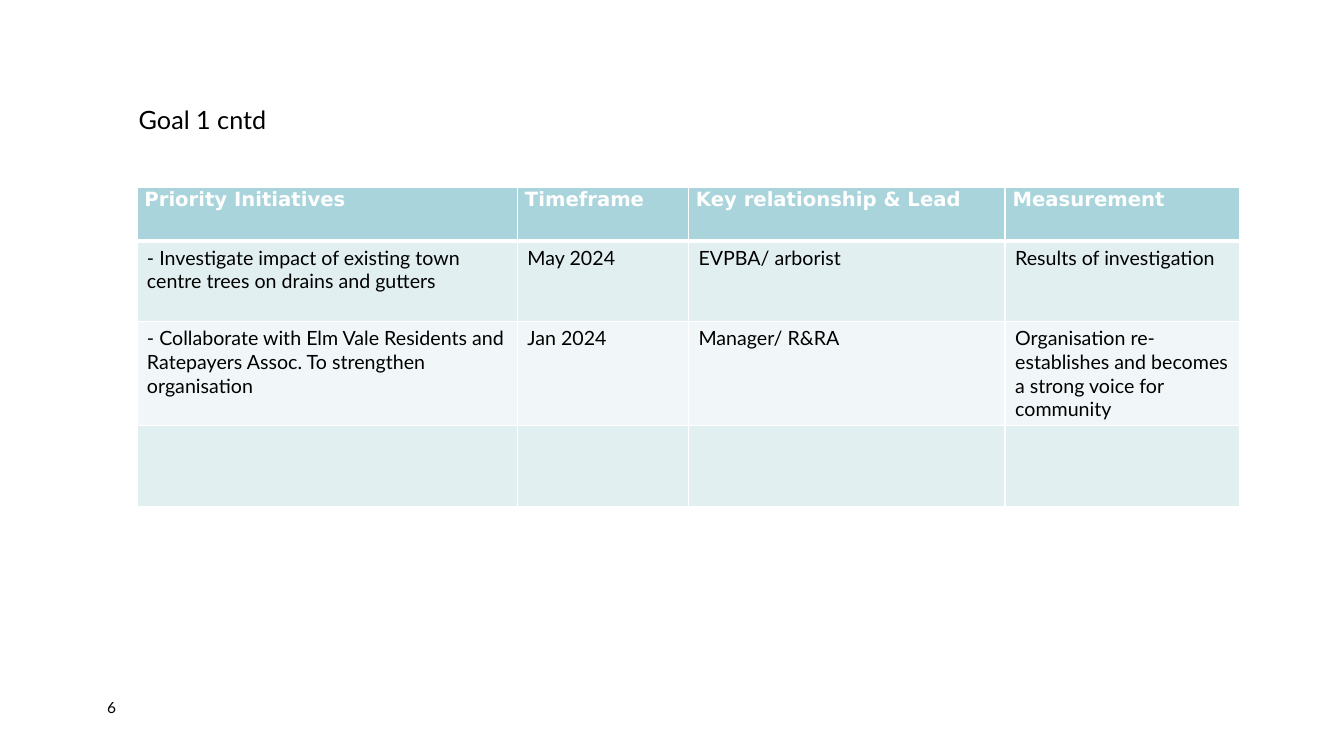
from dataclasses import dataclass

from lxml.etree import SubElement
from pptx import Presentation
from pptx.dml.color import RGBColor
from pptx.oxml.ns import qn
from pptx.util import Pt


@dataclass(frozen=True)
class Theme:
    body_font: str = "Lato"
    header_font: str = "DejaVu Sans"
    ink: str = "000000"
    white: str = "FFFFFF"
    header_fill: str = "A9D4DB"
    band_fills: tuple = ("E2EFF1", "F1F7F8")
    title_size: float = 18
    table_size: float = 14
    number_size: float = 11


def write_text(frame, text, *, font, size, color, bold=False,
               line_spacing=None, space_after=None):
    para = frame.paragraphs[0]
    if line_spacing is not None:
        para.line_spacing = line_spacing
    if space_after is not None:
        para.space_after = Pt(space_after)
    span = para.add_run()
    span.text = text
    span.font.name = font
    span.font.size = Pt(size)
    span.font.bold = bold
    span.font.color.rgb = RGBColor.from_string(color)


class PageBuilder:
    def __init__(self, page, theme):
        self.page = page
        self.theme = theme

    def text(self, text, left, top, width, height, *, size, inset=None):
        box = self.page.shapes.add_textbox(Pt(left), Pt(top), Pt(width), Pt(height))
        frame = box.text_frame
        frame.word_wrap = True
        if inset is not None:
            frame.margin_left = frame.margin_right = Pt(inset)
            frame.margin_top = frame.margin_bottom = Pt(inset)
        write_text(frame, text, font=self.theme.body_font, size=size,
                   color=self.theme.ink)

    def borders(self, cell, bottom=1):
        properties = cell._tc.get_or_add_tcPr()
        sides = {"a:lnL": 1, "a:lnR": 1, "a:lnT": 1, "a:lnB": bottom}
        for position, (side, width) in enumerate(sides.items()):
            line = SubElement(properties, qn(side), w=str(Pt(width)))
            fill = SubElement(line, qn("a:solidFill"))
            SubElement(fill, qn("a:srgbClr"), val=self.theme.white)
            properties.insert(position, line)

    def header_cell(self, cell, text):
        cell.margin_left = cell.margin_right = Pt(5.4)
        cell.margin_top = cell.margin_bottom = Pt(0)
        write_text(cell.text_frame, text, font=self.theme.header_font,
                   size=self.theme.table_size, color=self.theme.white,
                   bold=True, line_spacing=1.07, space_after=8)

    def body_cell(self, cell, text):
        if text:
            write_text(cell.text_frame, text, font=self.theme.body_font,
                       size=self.theme.table_size, color=self.theme.ink)

    def table(self, rows, left, top, widths, heights):
        table = self.page.shapes.add_table(
            len(rows), len(widths), Pt(left), Pt(top),
            Pt(sum(widths)), Pt(sum(heights))).table
        for column, width in zip(table.columns, widths):
            column.width = Pt(width)
        for index, (row, height) in enumerate(zip(rows, heights)):
            table.rows[index].height = Pt(height)
            is_header = index == 0
            fill = (self.theme.header_fill if is_header
                    else self.theme.band_fills[(index - 1) % 2])
            for cell, text in zip(table.rows[index].cells, row):
                cell.fill.solid()
                cell.fill.fore_color.rgb = RGBColor.from_string(fill)
                self.borders(cell, bottom=3 if is_header else 1)
                if is_header:
                    self.header_cell(cell, text)
                else:
                    self.body_cell(cell, text)


INITIATIVES = [
    ("Priority Initiatives", "Timeframe", "Key relationship & Lead", "Measurement"),
    ("- Investigate impact of existing town centre trees on drains and gutters",
     "May 2024", "EVPBA/ arborist", "Results of investigation"),
    ("- Collaborate with Elm Vale Residents and Ratepayers Assoc. "
     "To strengthen organisation",
     "Jan 2024", "Manager/ R&RA",
     "Organisation re-establishes and becomes a strong voice for community"),
    ("", "", "", ""),
]


def main():
    deck = Presentation()
    deck.slide_width, deck.slide_height = Pt(960), Pt(540)
    theme = Theme()
    builder = PageBuilder(deck.slides.add_slide(deck.slide_layouts[6]), theme)

    # Page number
    builder.text("6", 76.5, 498.5, 41, 19.5, size=theme.number_size, inset=0)

    # Initiatives table
    builder.table(INITIATIVES, 97.8, 133.5,
                  widths=(271.8, 122.2, 226.2, 167.6),
                  heights=(38.6, 57.6, 57.6, 57.6))

    # Title
    builder.text("Goal 1 cntd", 92, 71.3, 472.5, 29, size=theme.title_size)

    deck.save("out.pptx")


if __name__ == "__main__":
    main()
